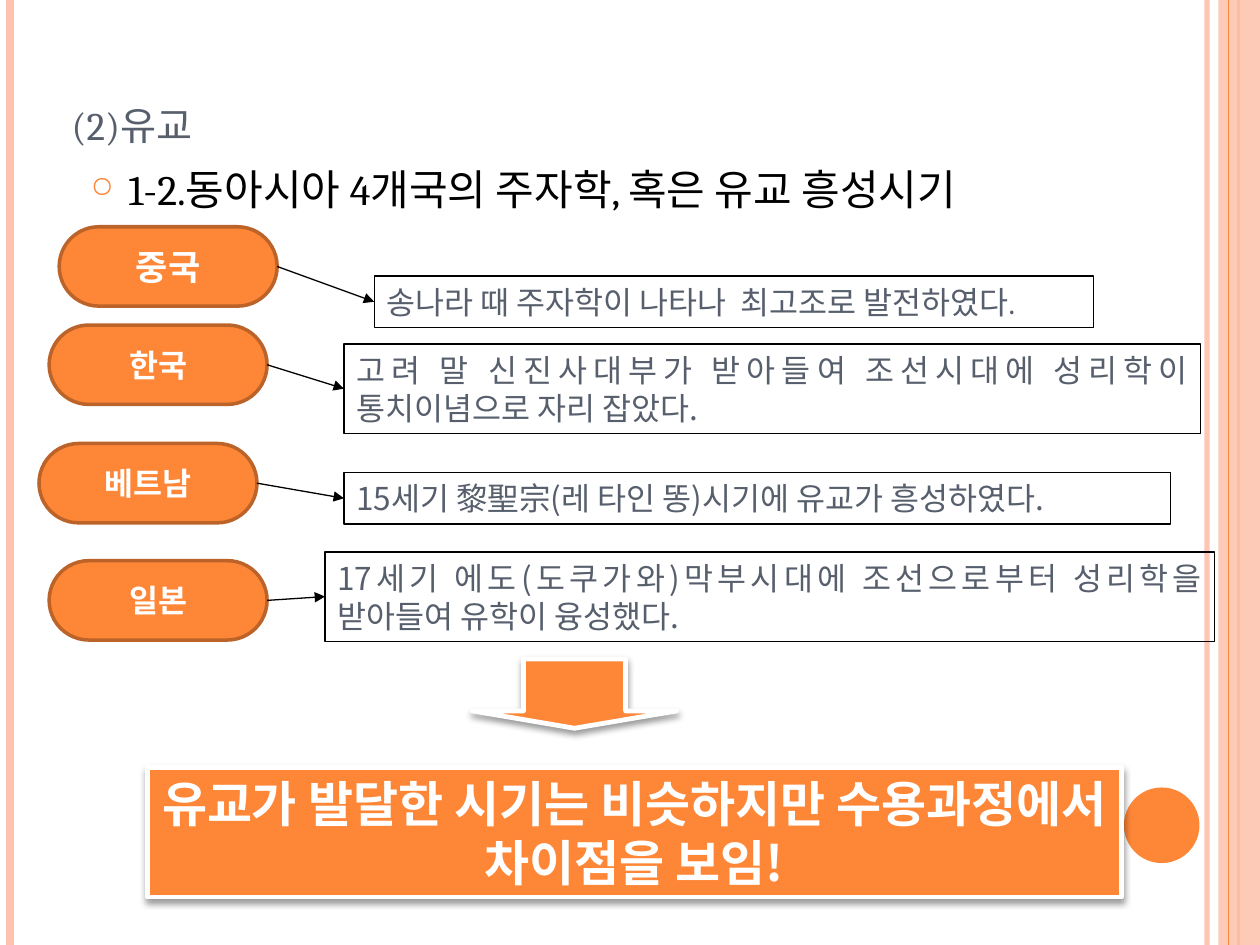
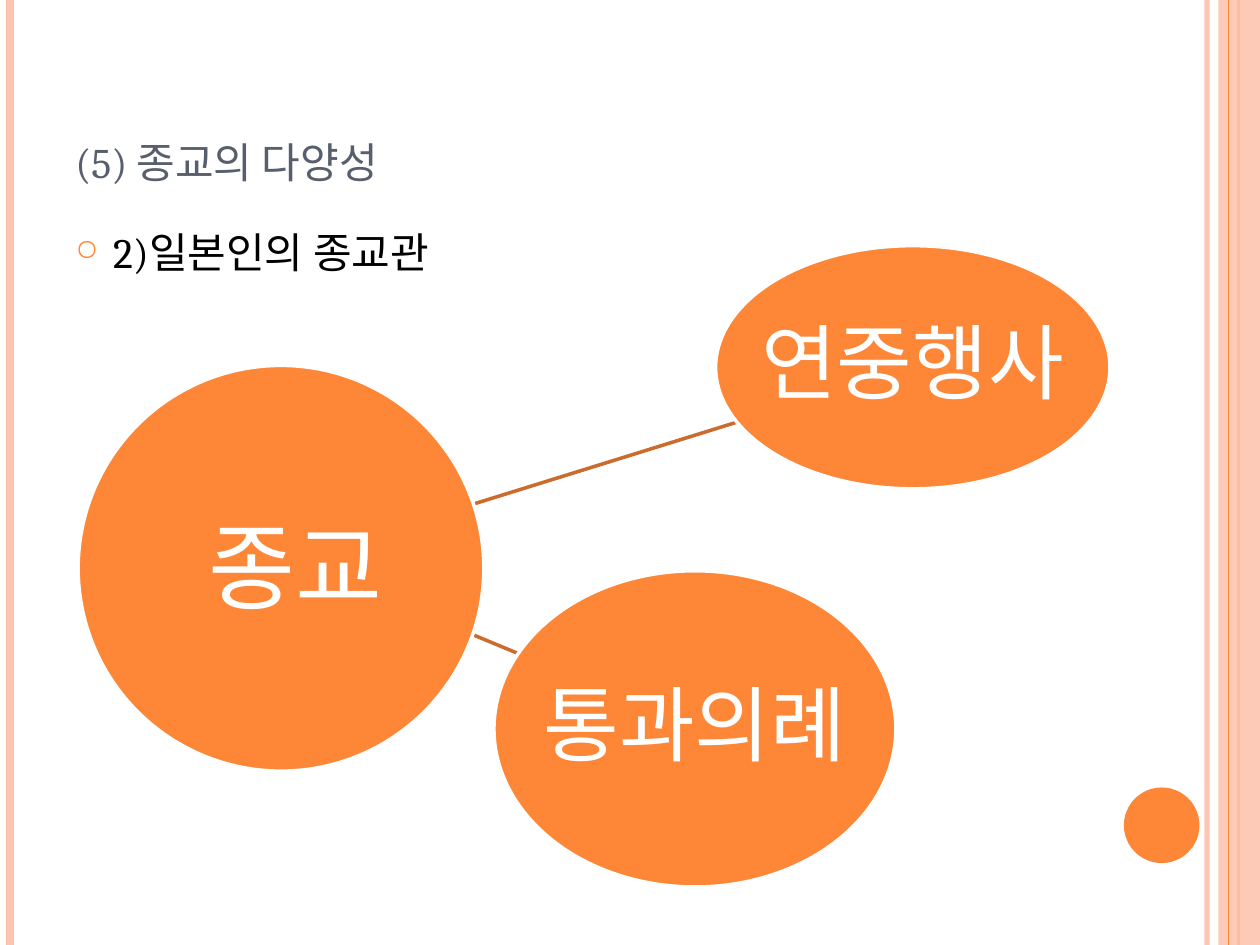
from dataclasses import dataclass
from lxml.etree import SubElement
from pptx import Presentation
from pptx.dml.color import RGBColor
from pptx.enum.shapes import MSO_CONNECTOR, MSO_SHAPE
from pptx.enum.text import MSO_ANCHOR, PP_ALIGN
from pptx.oxml.ns import qn
from pptx.util import Inches, Pt


@dataclass(frozen=True)
class Theme:
    orange: str = "FE8637"
    peach: str = "FEC3AE"
    pill_edge: str = "BC6329"
    spoke: str = "CB6B2C"
    slate: str = "575F6D"
    black: str = "000000"
    white: str = "FFFFFF"
    latin: str = "Cambria"
    korean: str = "Noto Sans CJK KR"
    body_size: int = 24
    note_size: int = 18
    conclusion_size: int = 28
    branch_size: int = 47
    hub_size: int = 54


THEME = Theme()
WIDTH, HEIGHT = 10, 7.5

# Content: places are (left, top, width, height) in inches
CONFUCIANISM = {
    "title": ("(2)유교", (0.47, 0.55, 8.17, 0.69), 28),
    "body": ("1-2.동아시아 4개국의 주자학, 혹은 유교 흥성시기", (0.62, 1.25, 8.05, 4.5)),
}
PILL_SIZE = (1.73, 0.63)
# country, text size, pill corner, note, note place, note font
COUNTRIES = [
    ("중국", 20, (0.47, 1.8), "송나라 때 주자학이 나타나  최고조로 발전하였다. ",
     (2.97, 2.19, 5.71, 0.41), THEME.latin),
    ("한국", 18, (0.39, 2.58),
     "고려 말 신진사대부가 받아들여 조선시대에 성리학이 통치이념으로 자리 잡았다.",
     (2.73, 2.73, 6.8, 0.71), THEME.korean),
    ("베트남", 18, (0.31, 3.52), "15세기 黎聖宗(레 타인 똥)시기에 유교가 흥성하였다. ",
     (2.73, 3.75, 6.56, 0.41), THEME.korean),
    ("일본", 18, (0.39, 4.45),
     "17세기 에도(도쿠가와)막부시대에 조선으로부터 성리학을 받아들여 유학이 융성했다. ",
     (2.58, 4.38, 7.06, 0.71), THEME.korean),
]
DOWN_ARROW = (3.75, 5.23, 1.62, 0.55)
CONCLUSION = ("유교가 발달한 시기는 비슷하지만 수용과정에서 차이점을 보임!",
              (1.17, 6.09, 7.73, 1.03))

RELIGION = {
    "title": ("(5) 종교의 다양성", (0.5, 0.3, 8.17, 1.25), 30),
    "body": ("2)일본인의 종교관", (0.5, 1.75, 8.17, 5.33)),
}
HUB = ("종교", (0.62, 2.9, 3.22, 3.22), (1.56, 3.98, 2.89, 1.01))
# branch, ellipse place, spoke start, spoke end
BRANCHES = [
    ("연중행사", (5.68, 1.95, 3.13, 1.93), (3.47, 4.09), (5.85, 3.35)),
    ("통과의례", (3.92, 4.53, 3.19, 2.51), (3.47, 4.92), (4.12, 5.19)),
]

# Frame on every slide: x, colour, weight, opacity
RULES_BEHIND = [(9.58, THEME.peach, 3, 93), (0.08, THEME.peach, 4.5, 100),
                (9.83, THEME.orange, 1.5, 100)]
BAND = (9.67, 0, 0.33, HEIGHT)
RULES_ON_BAND = [(9.75, THEME.orange, 0.75, 100)]
BALL = (8.92, 6.25, 0.6, 0.6)


def colour(value):
    return RGBColor.from_string(value)


def set_opacity(shape, percent):
    """Make the first colour of a shape or line see-through."""
    if percent < 100:
        tint = next(shape._element.spPr.iter(qn("a:srgbClr")))
        SubElement(tint, qn("a:alpha"), val=str(percent * 1000))


def add_shadow(shape):
    effects = shape._element.spPr.find(qn("a:effectLst"))
    shadow = SubElement(effects, qn("a:outerShdw"), blurRad=str(Pt(4)), dist=str(Pt(2)),
                        dir="5400000", algn="ctr", rotWithShape="0")
    tint = SubElement(shadow, qn("a:srgbClr"), val=THEME.black)
    SubElement(tint, qn("a:alpha"), val="40000")


def add_bullet(para):
    properties = para._p.get_or_add_pPr()
    properties.set("marL", str(Inches(0.3)))
    properties.set("indent", str(-Inches(0.3)))
    tint = SubElement(properties, qn("a:buClr"))
    SubElement(tint, qn("a:srgbClr"), val=THEME.orange)
    SubElement(properties, qn("a:buSzPct"), val="70000")
    SubElement(properties, qn("a:buChar"), char="○")


def write(shape, text, *, size, ink, font=THEME.latin, bold=False, align=PP_ALIGN.LEFT,
          anchor=MSO_ANCHOR.TOP, wrap=True, small_caps=False, bullet=False):
    frame = shape.text_frame
    frame.word_wrap = wrap
    frame.vertical_anchor = anchor
    para = frame.paragraphs[0]
    para.alignment = align
    if bullet:
        para.space_before = Pt(6)
        add_bullet(para)
    span = para.add_run()
    span.text = text
    span.font.size = Pt(size)
    span.font.bold = bold
    span.font.name = font
    span.font.color.rgb = colour(ink)
    properties = span._r.get_or_add_rPr()
    SubElement(properties, qn("a:ea"), typeface=THEME.korean)
    if small_caps:
        properties.set("cap", "small")
    return para


def add_text(page, text, place, **style):
    box = page.shapes.add_textbox(*map(Inches, place))
    return write(box, text, **style)


def add_form(page, kind, place, fill=None, line=None, weight=1):
    shape = page.shapes.add_shape(kind, *map(Inches, place))
    shape.shadow.inherit = False
    if fill:
        shape.fill.solid()
        shape.fill.fore_color.rgb = colour(fill)
    else:
        shape.fill.background()
    if line:
        shape.line.color.rgb = colour(line)
        shape.line.width = Pt(weight)
    else:
        shape.line.fill.background()
    return shape


def add_line(page, start, end, ink, weight):
    line = page.shapes.add_connector(MSO_CONNECTOR.STRAIGHT, *map(Inches, (*start, *end)))
    line.line.color.rgb = colour(ink)
    line.line.width = Pt(weight)
    SubElement(line._element.spPr, qn("a:effectLst"))
    return line


def link(page, source, target):
    """Draw an arrow from the right side of source to the left side of target."""
    arrow = add_line(page, (0, 0), (1, 1), THEME.black, 0.75)
    arrow.begin_connect(source, 3)
    arrow.end_connect(target, 1)
    SubElement(arrow.line._get_or_add_ln(), qn("a:tailEnd"), type="triangle")


def add_rules(page, rules):
    for x, ink, weight, opacity in rules:
        set_opacity(add_line(page, (x, 0), (x, HEIGHT), ink, weight), opacity)


def add_page(deck, heading):
    """Start a slide with the shared frame, title and first bullet."""
    page = deck.slides.add_slide(deck.slide_layouts[6])
    add_rules(page, RULES_BEHIND)
    set_opacity(add_form(page, MSO_SHAPE.RECTANGLE, BAND, THEME.peach), 87)
    add_rules(page, RULES_ON_BAND)
    add_form(page, MSO_SHAPE.OVAL, BALL, THEME.orange)
    title, place, size = heading["title"]
    add_text(page, title, place, size=size, ink=THEME.slate,
             anchor=MSO_ANCHOR.BOTTOM, small_caps=True)
    body, place = heading["body"]
    add_text(page, body, place, size=THEME.body_size, ink=THEME.black, bullet=True)
    return page


def build_confucianism(deck):
    page = add_page(deck, CONFUCIANISM)
    # Countries with their notes
    for country, size, corner, note, place, font in COUNTRIES:
        pill = add_form(page, MSO_SHAPE.ROUNDED_RECTANGLE, (*corner, *PILL_SIZE),
                        THEME.orange, THEME.pill_edge, 2)
        pill.adjustments[0] = 0.5
        write(pill, country, size=size, ink=THEME.white, bold=True, wrap=False,
              align=PP_ALIGN.CENTER, anchor=MSO_ANCHOR.MIDDLE)
        box = add_form(page, MSO_SHAPE.RECTANGLE, place, line=THEME.black, weight=0.75)
        write(box, note, size=THEME.note_size, ink=THEME.slate, font=font,
              align=PP_ALIGN.JUSTIFY, anchor=MSO_ANCHOR.MIDDLE)
        link(page, pill, box)
    # Conclusion
    text, place = CONCLUSION
    arrow = add_form(page, MSO_SHAPE.DOWN_ARROW, DOWN_ARROW, THEME.orange, THEME.white, 2.75)
    arrow.adjustments[0], arrow.adjustments[1] = 0.5, 0.25
    banner = add_form(page, MSO_SHAPE.RECTANGLE, place, THEME.orange, THEME.white, 2.75)
    for shape in (arrow, banner):
        add_shadow(shape)
    write(banner, text, size=THEME.conclusion_size, ink=THEME.white, font=THEME.korean,
          bold=True, align=PP_ALIGN.CENTER)


def build_religion(deck):
    page = add_page(deck, RELIGION)
    # Spokes, then the hub and its branches
    for _, _, start, end in BRANCHES:
        add_line(page, start, end, THEME.spoke, 2)
    hub, circle, label = HUB
    add_form(page, MSO_SHAPE.OVAL, circle, THEME.orange, THEME.white, 2)
    for branch, place, _, _ in BRANCHES:
        ellipse = add_form(page, MSO_SHAPE.OVAL, place, THEME.orange, THEME.white, 2)
        para = write(ellipse, branch, size=THEME.branch_size, ink=THEME.white, wrap=False,
                     align=PP_ALIGN.CENTER, anchor=MSO_ANCHOR.MIDDLE)
        para.line_spacing = 0.9
    add_text(page, hub, label, size=THEME.hub_size, ink=THEME.white)


def main():
    deck = Presentation()
    deck.slide_width, deck.slide_height = Inches(WIDTH), Inches(HEIGHT)
    build_confucianism(deck)
    build_religion(deck)
    deck.save("out.pptx")


if __name__ == "__main__":
    main()
